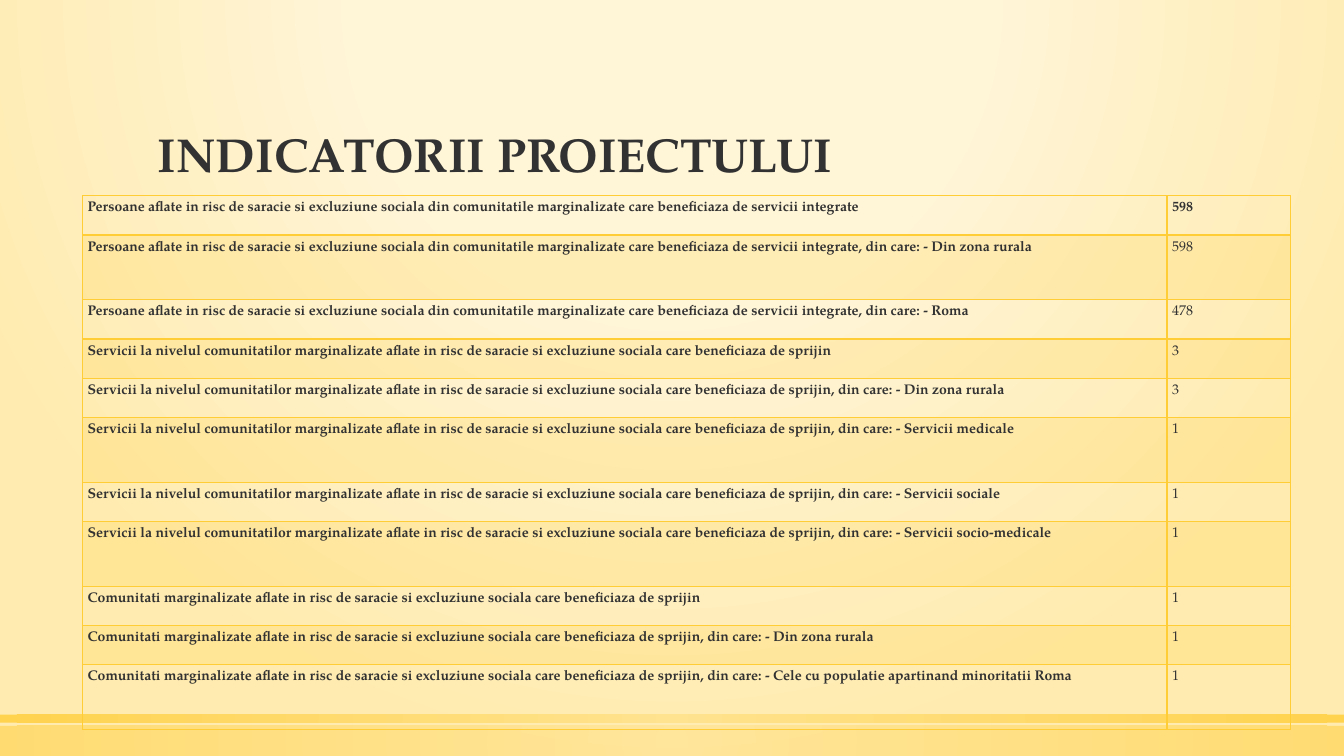
from dataclasses import dataclass

from lxml.etree import SubElement
from pptx import Presentation
from pptx.dml.color import RGBColor
from pptx.enum.shapes import MSO_SHAPE as Preset
from pptx.enum.text import MSO_ANCHOR as Anchor, PP_ALIGN as Align
from pptx.oxml import parse_xml
from pptx.oxml.ns import nsdecls, qn
from pptx.util import Cm, Pt


@dataclass(frozen=True)
class Theme:
    """Colours, font and type sizes of the slide."""
    font: str = "TeX Gyre Pagella"
    ink: str = "323232"
    gold: str = "FFCD36"
    light_gold: str = "FFE186"
    cream: str = "FFF5D7"
    sand: str = "FFEBAF"
    title_size: int = 34
    table_size: int = 10


THEME = Theme()
PEOPLE = ("Persoane aflate in risc de saracie si excluziune sociala din "
          "comunitatile marginalizate care beneficiaza de servicii integrate")
SERVICES = ("Servicii la nivelul comunitatilor marginalizate aflate in risc de "
            "saracie si excluziune sociala care beneficiaza de sprijin")
COMMUNITIES = ("Comunitati marginalizate aflate in risc de saracie si excluziune "
               "sociala care beneficiaza de sprijin")
LOW, TALL = 0.99, 1.63
INDICATORS = [
    (PEOPLE, "", 598, LOW),
    (PEOPLE, "Din zona rurala", 598, TALL),
    (PEOPLE, "Roma", 478, LOW),
    (SERVICES, "", 3, LOW),
    (SERVICES, "Din zona rurala", 3, LOW),
    (SERVICES, "Servicii medicale", 1, TALL),
    (SERVICES, "Servicii sociale", 1, LOW),
    (SERVICES, "Servicii socio-medicale", 1, TALL),
    (COMMUNITIES, "", 1, LOW),
    (COMMUNITIES, "Din zona rurala", 1, LOW),
    (COMMUNITIES, "Cele cu populatie apartinand minoritatii Roma", 1, TALL),
]


def write(frame, text, *, size, bold=False, align=Align.LEFT, spacing=1.0):
    """Put one formatted paragraph into a text frame."""
    paragraph = frame.paragraphs[0]
    paragraph.alignment = align
    paragraph.line_spacing = spacing
    run = paragraph.add_run()
    run.text = text
    run.font.name = THEME.font
    run.font.size = Pt(size)
    run.font.bold = bold
    run.font.color.rgb = RGBColor.from_string(THEME.ink)


def paint_gradient(parent, stops, focus):
    """Replace the empty fill of an element with a circular gradient."""
    stop_xml = "".join(
        f'<a:gs pos="{position * 1000}"><a:srgbClr val="{color}">'
        f'<a:alpha val="{alpha * 1000}"/></a:srgbClr></a:gs>'
        for position, color, alpha in stops)
    edges = " ".join(f'{side}="{value * 1000}"' for side, value in zip("ltrb", focus))
    gradient = parse_xml(
        f'<a:gradFill {nsdecls("a")} rotWithShape="1"><a:gsLst>{stop_xml}</a:gsLst>'
        f'<a:path path="circle"><a:fillToRect {edges}/></a:path></a:gradFill>')
    parent.replace(parent.find(qn("a:noFill")), gradient)


class SlideBuilder:
    """Draws themed elements on the current slide."""

    def __init__(self, slide, theme):
        self.slide = slide
        self.theme = theme

    def background(self):
        """Fill the slide with a soft glow."""
        self.slide.background.fill.background()
        properties = self.slide.element.find(".//" + qn("p:bgPr"))
        stops = [(0, self.theme.cream, 59), (40, self.theme.cream, 66),
                 (100, self.theme.sand, 100)]
        paint_gradient(properties, stops, (50, -80, 50, 180))

    def band(self, top, height, alpha):
        """Add a translucent band across the full width."""
        shape = self.slide.shapes.add_shape(
            Preset.RECTANGLE, 0, Cm(top), Cm(33.87), Cm(height))
        shape.shadow.inherit = False
        shape.line.fill.background()
        shape.fill.background()
        stops = [(0, self.theme.light_gold, alpha), (100, self.theme.gold, alpha)]
        paint_gradient(shape.element.spPr, stops, (50, 50, 50, 50))

    def title(self, text):
        """Add the title, resting on the bottom of its box."""
        box = self.slide.shapes.add_textbox(Cm(3.73), Cm(1.3), Cm(26.42), Cm(3.43))
        frame = box.text_frame
        frame.word_wrap = True
        frame.vertical_anchor = Anchor.BOTTOM
        write(frame, text, size=self.theme.title_size, bold=True, spacing=0.9)

    def table(self, indicators):
        """Add the indicator table with alternating row tints."""
        height = sum(indicator[-1] for indicator in indicators)
        shape = self.slide.shapes.add_table(
            len(indicators), 2, Cm(2.08), Cm(4.93), Cm(30.45), Cm(height))
        table = shape.table
        table.first_row = table.horz_banding = False
        for column, width in zip(table.columns, (27.33, 3.12)):
            column.width = Cm(width)
        for index, (subject, detail, value, row_height) in enumerate(indicators):
            table.rows[index].height = Cm(row_height)
            label = f"{subject}, din care: - {detail}" if detail else subject
            self.cell(table.cell(index, 0), label, index, bold=True)
            self.cell(table.cell(index, 1), str(value), index, bold=index == 0)

    def cell(self, cell, text, row, bold):
        """Write, border and tint one table cell."""
        cell.margin_left = cell.margin_right = Cm(0.13)
        cell.margin_top = cell.margin_bottom = Cm(0.13)
        write(cell.text_frame, text, size=self.theme.table_size, bold=bold,
              align=Align.JUSTIFY, spacing=1.07)
        properties = cell._tc.get_or_add_tcPr()
        for side in "LRTB":
            thick = (row, side) in ((0, "B"), (1, "T"))
            line = SubElement(properties, qn(f"a:ln{side}"), w=str(Pt(2 if thick else 1)))
            solid = SubElement(line, qn("a:solidFill"))
            SubElement(solid, qn("a:srgbClr"), val=self.theme.gold)
        if row % 2:
            cell.fill.solid()
            cell.fill.fore_color.rgb = RGBColor.from_string(self.theme.gold)
            color = properties.find(qn("a:solidFill")).find(qn("a:srgbClr"))
            SubElement(color, qn("a:alpha"), val="20000")
        else:
            cell.fill.background()


def main():
    """Build and save the presentation."""
    presentation = Presentation()
    presentation.slide_width = Cm(33.87)
    presentation.slide_height = Cm(19.05)
    slide = presentation.slides.add_slide(presentation.slide_layouts[6])
    builder = SlideBuilder(slide, THEME)
    builder.background()
    builder.band(top=18.29, height=0.76, alpha=50)
    builder.band(top=18.01, height=0.2, alpha=80)
    builder.title("INDICATORII PROIECTULUI")
    builder.table(INDICATORS)
    presentation.save("out.pptx")


if __name__ == "__main__":
    main()
